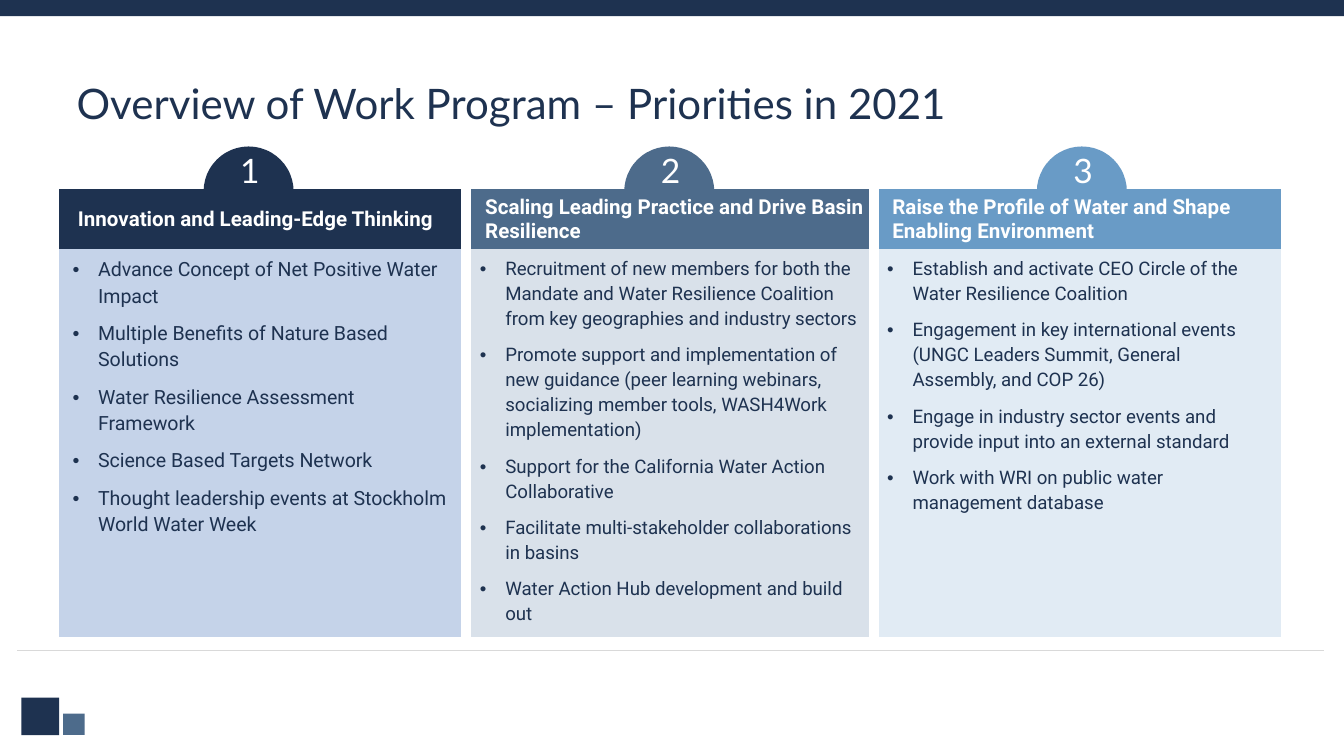
"""Builds the slide on 2021 work program priorities."""
import pptx
import pptx.dml.color
import pptx.enum.shapes
import pptx.enum.text
import pptx.oxml
import pptx.oxml.ns
import pptx.util

TITLE = "Overview of Work Program – Priorities in 2021"
COLORS = {"navy": "1E3250", "slate": "4D6B8B", "sky": "699BC6", "white": "FFFFFF",
          "rule": "D9D9D9", "pale navy": "C5D3E9", "pale slate": "D9E1EA", "pale sky": "E1EBF4"}
PRIORITIES = [
    {"head": "Innovation and Leading-Edge Thinking", "color": "navy", "center": 1.85, "size": 10.5,
     "items": ["Advance Concept of Net Positive Water Impact",
               "Multiple Benefits of Nature Based Solutions",
               "Water Resilience Assessment Framework",
               "Science Based Targets Network",
               "Thought leadership events at Stockholm World Water Week"]},
    {"head": "Scaling Leading Practice and Drive Basin Resilience", "color": "slate",
     "center": 4.98, "size": 10,
     "items": ["Recruitment of new members for both the Mandate and Water Resilience Coalition "
               "from key geographies and industry sectors",
               "Promote support and implementation of new guidance (peer learning webinars, "
               "socializing member tools, WASH4Work implementation)",
               "Support for the California Water Action Collaborative",
               "Facilitate multi-stakeholder collaborations in basins",
               "Water Action Hub development and build out"]},
    {"head": "Raise the Profile of Water and Shape Enabling Environment", "color": "sky",
     "center": 8.05, "size": 10,
     "items": ["Establish and activate CEO Circle of the Water Resilience Coalition",
               "Engagement in key international events (UNGC Leaders Summit, General Assembly, "
               "and COP 26)",
               "Engage in industry sector events and provide input into an external standard",
               "Work with WRI on public water management database"]},
]
DECOR = [("navy", 0.16, 5.19, 0.28, 0.28), ("slate", 0.47, 5.31, 0.16, 0.16),
         ("navy", 0, 0, 10, 0.12)]
SLIDE_W = 10
SLIDE_H = SLIDE_W * 9 / 16
TABLE_LEFT, TABLE_TOP, COL_W, ROWS = 0.44, 1.41, 3.03, (0.44, 2.91)
BADGE, BADGE_TOP = 0.67, 1.09
NO_STYLE = "{2D5ABB26-0587-4C30-8999-92F81FD0307C}"

Inches, Pt = pptx.util.Inches, pptx.util.Pt
SHAPE = pptx.enum.shapes.MSO_SHAPE
ALIGN, ANCHOR = pptx.enum.text.PP_ALIGN, pptx.enum.text.MSO_ANCHOR


def rgb(name):
    return pptx.dml.color.RGBColor.from_string(COLORS[name])


def element(xml):
    return pptx.oxml.parse_xml(xml.replace(">", f" {pptx.oxml.ns.nsdecls('a')}>", 1))


def write(tf, lines, size, color, font="Roboto", bold=False, align=ALIGN.LEFT,
          spacing=1.0, before=0, indent=0, bullet=False):
    for i, line in enumerate(lines):
        p = tf.paragraphs[0] if i == 0 else tf.add_paragraph()
        p.alignment, p.line_spacing = align, spacing
        p.space_before = Pt(before if i else 0)
        pPr = p._p.get_or_add_pPr()
        pPr.set("marL", str(Inches(indent)))
        pPr.set("indent", str(-Inches(indent) if bullet else 0))
        if bullet:
            pPr.append(element('<a:buFont typeface="Arial"></a:buFont>'))
            pPr.append(element('<a:buChar char="•"></a:buChar>'))
        r = p.add_run()
        r.text = line
        r.font.size, r.font.name, r.font.bold = Pt(size), font, bold
        r.font.color.rgb = rgb(color)


def add_filled(shapes, kind, color, *box):
    sp = shapes.add_shape(kind, *map(Inches, box))
    sp.shadow.inherit = False
    sp.fill.solid()
    sp.fill.fore_color.rgb = rgb(color)
    sp.line.fill.background()


def add_badge(s, number, color, center):
    group = s.shapes.add_group_shape()
    add_filled(group.shapes, SHAPE.OVAL, color, center - BADGE / 2, BADGE_TOP, BADGE, BADGE)
    box = group.shapes.add_textbox(Inches(center - 0.17), Inches(1.07), Inches(0.36), Inches(0.4))
    box.text_frame.word_wrap = False
    write(box.text_frame, [str(number)], 18, "white", font="Lato", align=ALIGN.CENTER)


def style_cell(cell, fill, sides):
    cell.fill.solid()
    cell.fill.fore_color.rgb = rgb(fill)
    tcPr = cell._tc.get_or_add_tcPr()
    for i, side in enumerate(sides):
        tcPr.insert(i, element(f'<a:ln{side} w="{Pt(6)}"><a:solidFill><a:srgbClr '
                               f'val="{COLORS["white"]}"/></a:solidFill></a:ln{side}>'))


def add_priorities(s):
    n = len(PRIORITIES)
    table = s.shapes.add_table(2, n, Inches(TABLE_LEFT), Inches(TABLE_TOP),
                               Inches(COL_W * n), Inches(sum(ROWS))).table
    table._tbl.tblPr.find(pptx.oxml.ns.qn("a:tableStyleId")).text = NO_STYLE
    table.horz_banding = False
    for row, height in zip(table.rows, ROWS):
        row.height = Inches(height)
    for i, item in enumerate(PRIORITIES):
        table.columns[i].width = Inches(COL_W)
        sides = ("L" if i else "") + ("R" if i < n - 1 else "")
        head, body = table.cell(0, i), table.cell(1, i)
        style_cell(head, item["color"], sides)
        style_cell(body, "pale " + item["color"], sides + "B")
        head.vertical_anchor = ANCHOR.MIDDLE
        head.margin_left = head.margin_right = Inches(0.02)
        head.margin_top = head.margin_bottom = 0
        write(head.text_frame, [item["head"]], 11, "white", bold=True, indent=0.12)
        write(body.text_frame, item["items"], item["size"], "navy",
              spacing=1.15, before=6, indent=0.19, bullet=True)


def main():
    prs = pptx.Presentation()
    prs.slide_width, prs.slide_height = Inches(SLIDE_W), Inches(SLIDE_H)
    s = prs.slides.add_slide(prs.slide_layouts[5])
    title = s.shapes.title
    title.left, title.top, title.width, title.height = map(Inches, (0.47, 0.57, 9.05, 0.5))
    title.text_frame.vertical_anchor = ANCHOR.TOP
    write(title.text_frame, [TITLE], 22.5, "navy", font="Lato", spacing=0.9)

    for color, *box in DECOR:
        add_filled(s.shapes, SHAPE.RECTANGLE, color, *box)
    for number, item in reversed(list(enumerate(PRIORITIES, 1))):
        add_badge(s, number, item["color"], item["center"])
    rule = s.shapes.add_connector(pptx.enum.shapes.MSO_CONNECTOR.STRAIGHT,
                                  *map(Inches, (0.13, 4.84, 9.85, 4.84)))
    rule.line.color.rgb, rule.line.width = rgb("rule"), Pt(0.75)
    rule._element.spPr.append(element("<a:effectLst></a:effectLst>"))
    add_priorities(s)
    prs.save("out.pptx")


if __name__ == "__main__":
    main()
